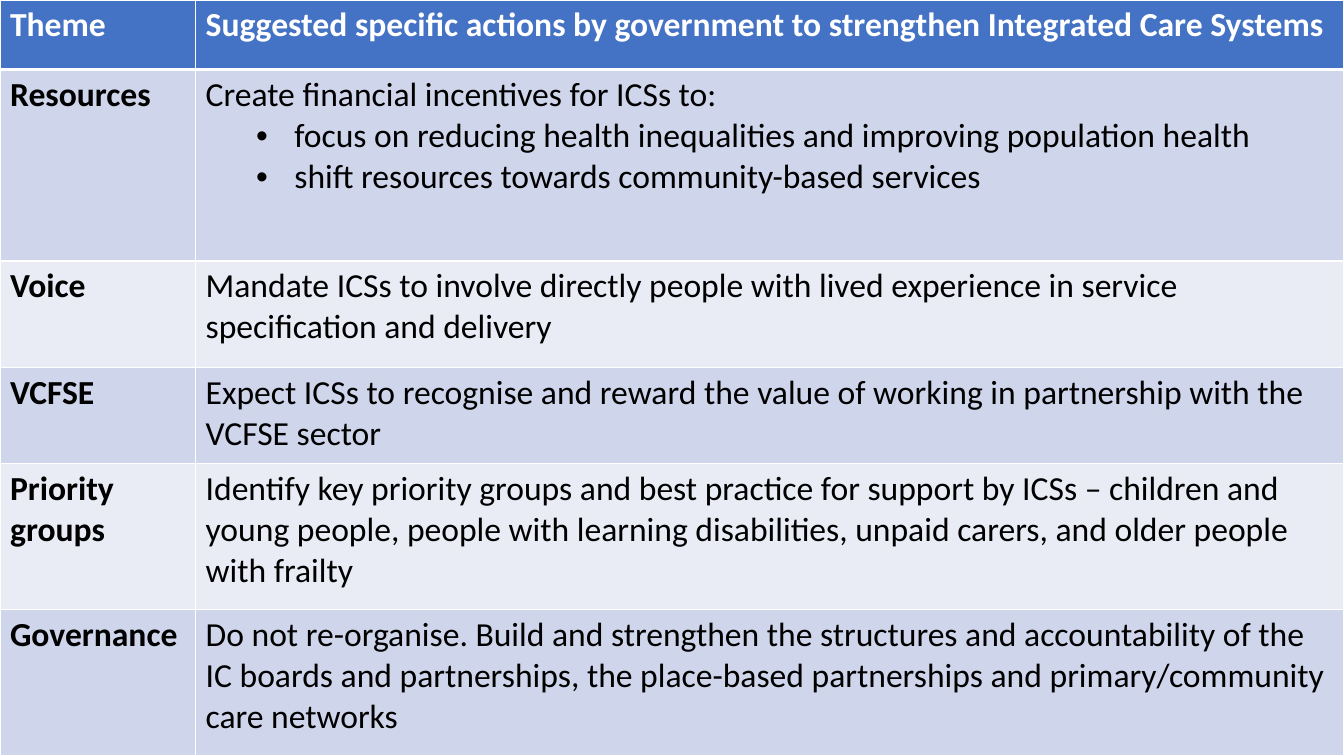
from lxml import etree
from pptx import Presentation
from pptx.dml.color import RGBColor
from pptx.oxml.ns import qn
from pptx.util import Inches, Pt

BLANK_LAYOUT = 6
FONT = "Calibri"
SIZE = 24
COLORS = {
    "header": "4472C4",
    "odd": "CFD5EA",
    "even": "E9EBF5",
    "border": "FFFFFF",
    "header_text": "FFFFFF",
    "text": "000000",
}
COL_WIDTHS = [1.94, 11.39]
ROW_HEIGHTS = [0.69, 1.9, 1.06, 0.95, 1.45, 1.45]
BULLET = "•"
ROWS = [
    ("Theme", ["Suggested specific actions by government to strengthen Integrated Care Systems"]),
    ("Resources", [
        "Create financial incentives for ICSs to:",
        BULLET + "focus on reducing health inequalities and improving population health",
        BULLET + "shift resources towards community-based services",
    ]),
    ("Voice", ["Mandate ICSs to involve directly people with lived experience "
               "in service specification and delivery"]),
    ("VCFSE", ["Expect ICSs to recognise and reward the value of working "
               "in partnership with the VCFSE sector"]),
    ("Priority groups", ["Identify key priority groups and best practice for support by ICSs – "
                         "children and young people, people with learning disabilities, "
                         "unpaid carers, and older people with frailty"]),
    ("Governance", ["Do not re-organise. Build and strengthen the structures and accountability "
                    "of the IC boards and partnerships, the place-based partnerships "
                    "and primary/community care networks"]),
]


def rgb(name):
    return RGBColor.from_string(COLORS[name])


def set_borders(cell, widths):
    tcPr = cell._tc.get_or_add_tcPr()
    for side, width in zip("LRTB", widths):
        ln = etree.SubElement(tcPr, qn(f"a:ln{side}"), w=str(Pt(width)))
        fill = etree.SubElement(ln, qn("a:solidFill"))
        etree.SubElement(fill, qn("a:srgbClr"), val=COLORS["border"])


def set_bullet(p):
    p.level = 1
    pPr = p._p.get_or_add_pPr()
    pPr.set("marL", str(Inches(0.88)))
    pPr.set("indent", str(Inches(-0.38)))
    etree.SubElement(pPr, qn("a:buFont"), typeface="Arial")
    etree.SubElement(pPr, qn("a:buChar"), char=BULLET)


def fill_cell(cell, lines, fill, color, bold):
    tf = cell.text_frame
    for i, line in enumerate(lines):
        p = tf.paragraphs[0] if i == 0 else tf.add_paragraph()
        p.text = line.removeprefix(BULLET)
        if line.startswith(BULLET):
            set_bullet(p)
        font = p.runs[0].font
        font.name = FONT
        font.size = Pt(SIZE)
        font.bold = bold
        font.color.rgb = rgb(color)
    cell.fill.solid()
    cell.fill.fore_color.rgb = rgb(fill)


def add_actions_table(s):
    frame = s.shapes.add_table(len(ROWS), len(COL_WIDTHS), Inches(0), Inches(0),
                               Inches(sum(COL_WIDTHS)), Inches(sum(ROW_HEIGHTS)))
    table = frame.table
    for column, width in zip(table.columns, COL_WIDTHS):
        column.width = Inches(width)
    for i, (theme, actions) in enumerate(ROWS):
        table.rows[i].height = Inches(ROW_HEIGHTS[i])
        header = i == 0
        fill = "header" if header else "odd" if i % 2 else "even"
        color = "header_text" if header else "text"
        for j, lines in enumerate([[theme], actions]):
            cell = table.cell(i, j)
            set_borders(cell, [1, 1, 3 if i == 1 else 1, 3 if header else 1])
            fill_cell(cell, lines, fill, color, header or j == 0)


def main():
    prs = Presentation()
    prs.slide_width = Inches(13.33)
    prs.slide_height = Inches(7.5)
    s = prs.slides.add_slide(prs.slide_layouts[BLANK_LAYOUT])
    add_actions_table(s)
    prs.save("out.pptx")


if __name__ == "__main__":
    main()
